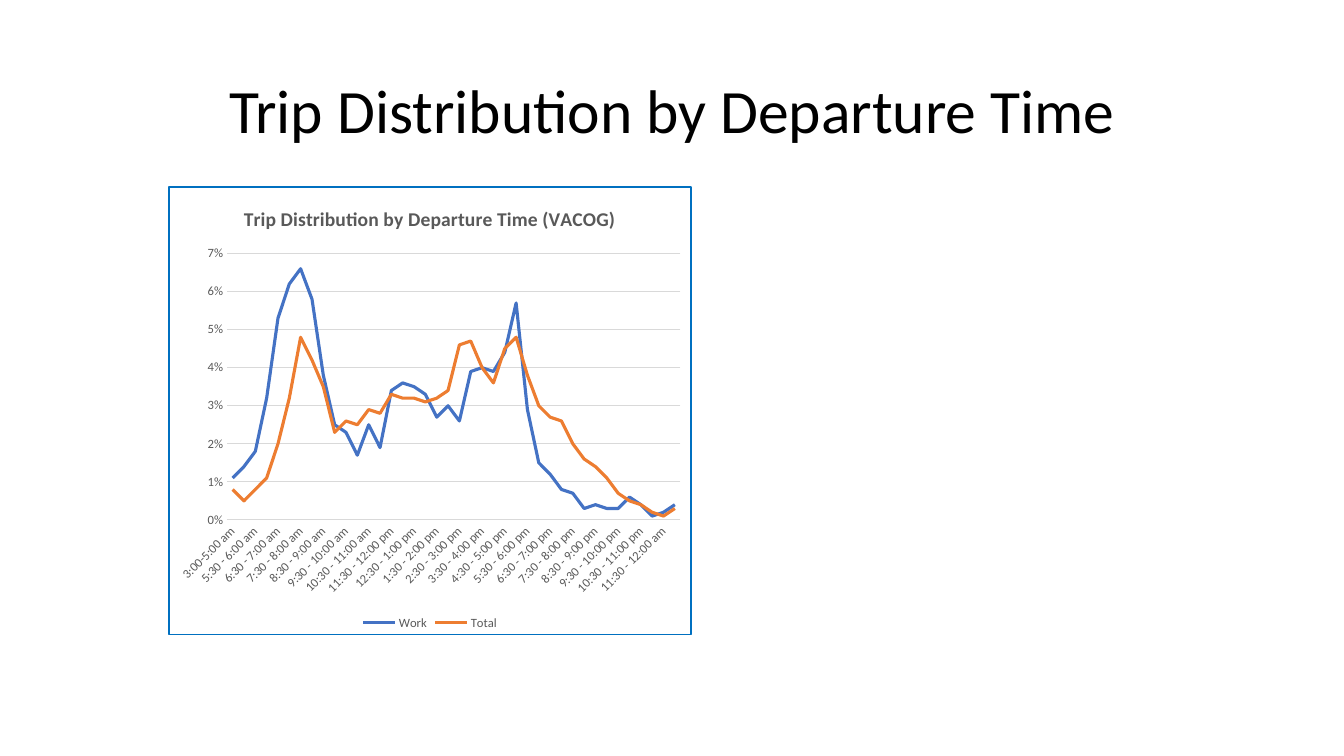
from pptx import Presentation
from pptx.chart.data import CategoryChartData
from pptx.dml.color import RGBColor
from pptx.enum import chart as ch, text
from pptx.oxml import parse_xml
from pptx.oxml.ns import nsdecls, qn
from pptx.util import Inches, Pt

# Content
HEADING = "Trip Distribution by Departure Time"
CHART_TITLE = "Trip Distribution by Departure Time (VACOG)"
FONT = "Calibri"
COLORS = {"heading": "000000", "label": "595959", "grid": "D9D9D9", "border": "0070C0",
          "paper": "FFFFFF", "Work": "4472C4", "Total": "ED7D31"}
# Share of trips in percent, one value per departure period
SHARES = {
    "Work": [1.1, 1.4, 1.8, 3.2, 5.3, 6.2, 6.6, 5.8, 3.8, 2.5,
             2.3, 1.7, 2.5, 1.9, 3.4, 3.6, 3.5, 3.3, 2.7, 3.0,
             2.6, 3.9, 4.0, 3.9, 4.4, 5.7, 2.9, 1.5, 1.2, 0.8,
             0.7, 0.3, 0.4, 0.3, 0.3, 0.6, 0.4, 0.1, 0.2, 0.4],
    "Total": [0.8, 0.5, 0.8, 1.1, 2.0, 3.2, 4.8, 4.2, 3.5, 2.3,
              2.6, 2.5, 2.9, 2.8, 3.3, 3.2, 3.2, 3.1, 3.2, 3.4,
              4.6, 4.7, 4.0, 3.6, 4.5, 4.8, 3.8, 3.0, 2.7, 2.6,
              2.0, 1.6, 1.4, 1.1, 0.7, 0.5, 0.4, 0.2, 0.1, 0.3],
}


def clock(half_hours):
    hour = half_hours // 2 % 12 or 12
    return f"{hour}:{half_hours % 2 * 30:02d}"


def period(start):
    end = start + 1
    return f"{clock(start)} - {clock(end)} {'pm' if 24 <= end < 48 else 'am'}"


# Half-hour periods from 5 am to midnight, between two longer ones
PERIODS = ["3:00-5:00 am", *(period(start) for start in range(10, 48)), "12:00 - 3:00 am"]


def color(name):
    return RGBColor.from_string(COLORS[name])


def set_font(font, size, name="label", bold=False):
    for key, value in {"size": Pt(size), "name": FONT, "bold": bold}.items():
        setattr(font, key, value)
    font.color.rgb = color(name)


def set_line(line, name, width):
    line.color.rgb = color(name)
    line.width = Pt(width)


prs = Presentation()
prs.slide_width, prs.slide_height = Inches(13.33), Inches(7.5)
slide = prs.slides.add_slide(prs.slide_layouts[6])

# Heading
heading = slide.shapes.add_textbox(Inches(0.92), Inches(0.4), Inches(11.5), Inches(1.45)).text_frame
heading.word_wrap = True
heading.vertical_anchor = text.MSO_ANCHOR.MIDDLE
heading.text = HEADING
line = heading.paragraphs[0]
line.alignment = text.PP_ALIGN.CENTER
line.line_spacing = 0.9
set_font(line.runs[0].font, 44, "heading")

# Chart
data = CategoryChartData(number_format="0.0%")
data.categories = PERIODS
for name, shares in SHARES.items():
    data.add_series(name, [round(share / 100, 3) for share in shares])
trips = slide.shapes.add_chart(ch.XL_CHART_TYPE.LINE, Inches(1.67), Inches(1.85),
                               Inches(5.19), Inches(4.45), data).chart
set_font(trips.font, 10, "heading")

trips.has_title = True
trips.chart_title.include_in_layout = False
trips.chart_title.text_frame.text = CHART_TITLE
set_font(trips.chart_title.text_frame.paragraphs[0].runs[0].font, 14, bold=True)

trips.has_legend = True
trips.legend.position = ch.XL_LEGEND_POSITION.BOTTOM
trips.legend.include_in_layout = False
set_font(trips.legend.font, 9)

# Lines
trips.plots[0].vary_by_categories = False
for series in trips.plots[0].series:
    series.smooth = False
    series.marker.style = ch.XL_MARKER_STYLE.NONE
    set_line(series.format.line, series.name, 2.25)

# Axes
periods_axis, share_axis = trips.category_axis, trips.value_axis
for axis in (periods_axis, share_axis):
    axis.major_tick_mark = axis.minor_tick_mark = ch.XL_TICK_MARK.NONE
    set_font(axis.tick_labels.font, 9)
set_line(periods_axis.format.line, "grid", 0.75)
periods_axis._element.find(qn("c:txPr")).find(qn("a:bodyPr")).set("rot", "-2700000")
for key, value in {"minimum_scale": 0, "maximum_scale": 0.07, "major_unit": 0.01}.items():
    setattr(share_axis, key, value)
share_axis.tick_labels.number_format = "0%"
share_axis.tick_labels.number_format_is_linked = False
share_axis.format.line.fill.background()
set_line(share_axis.major_gridlines.format.line, "grid", 0.75)

# Chart background and border
frame = parse_xml(
    f'<c:spPr {nsdecls("c", "a")}>'
    f'<a:solidFill><a:srgbClr val="{COLORS["paper"]}"/></a:solidFill>'
    f'<a:ln w="{Pt(1)}"><a:solidFill><a:srgbClr val="{COLORS["border"]}"/></a:solidFill></a:ln>'
    '</c:spPr>')
trips._chartSpace.chart.addnext(frame)

prs.save("out.pptx")
